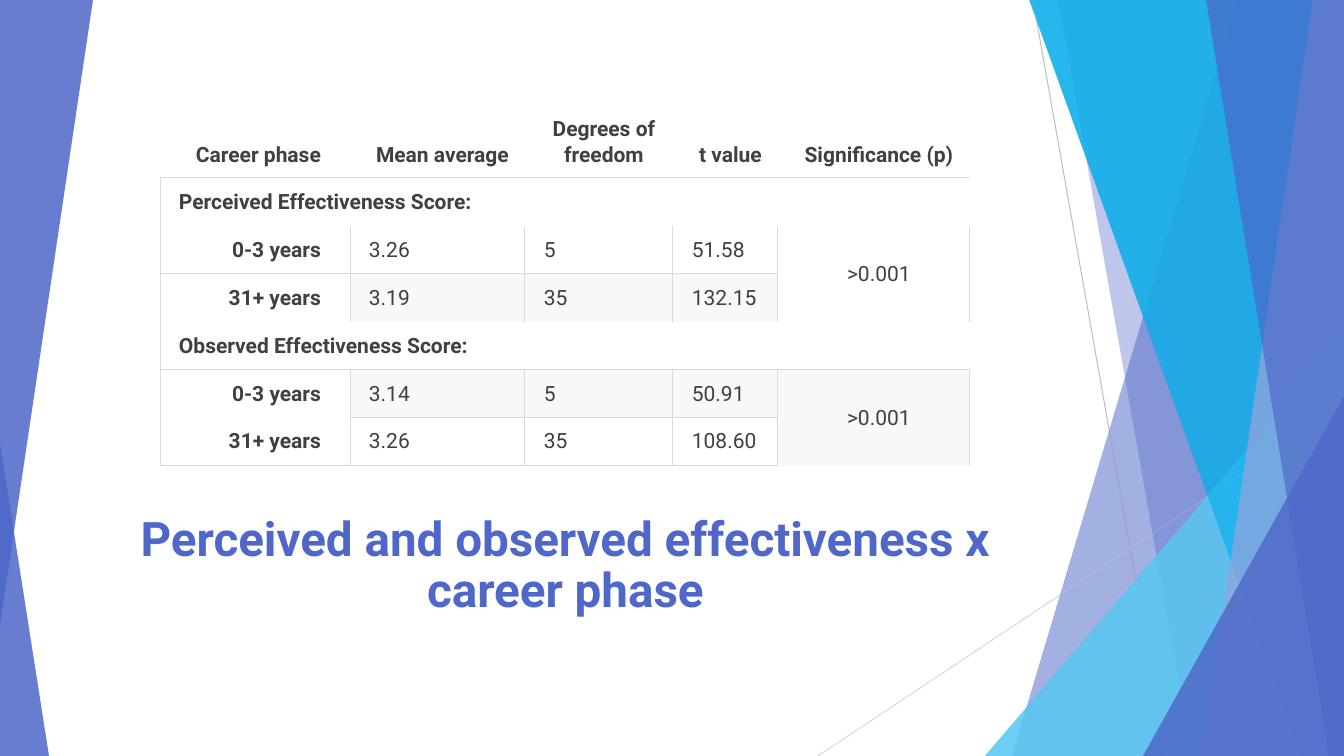
from lxml import etree
from pptx import Presentation
from pptx.dml.color import RGBColor
from pptx.enum.shapes import MSO_CONNECTOR, MSO_SHAPE
from pptx.enum.text import MSO_ANCHOR, MSO_AUTO_SIZE, PP_ALIGN
from pptx.oxml.ns import qn
from pptx.util import Pt

LEFT, MID, RIGHT = PP_ALIGN.LEFT, PP_ALIGN.CENTER, PP_ALIGN.RIGHT
TOP, MIDDLE, BOTTOM = MSO_ANCHOR.TOP, MSO_ANCHOR.MIDDLE, MSO_ANCHOR.BOTTOM
TRIANGLE, STRAIGHT = MSO_SHAPE.ISOSCELES_TRIANGLE, MSO_CONNECTOR.STRAIGHT

# Content
TITLE = "Perceived and observed effectiveness x career phase"
ROWS = [
    ("Career phase", "Mean average", "Degrees of freedom", "t value", "Significance (p)"),
    ("Perceived Effectiveness Score:",),
    ("0-3 years", "3.26", "5", "51.58", ">0.001"),
    ("31+ years", "3.19", "35", "132.15"),
    ("Observed Effectiveness Score:",),
    ("0-3 years", "3.14", "5", "50.91", ">0.001"),
    ("31+ years", "3.26", "35", "108.60"),
]
BLUE, GREY, TINT, INK = "4E67C8", "D8DCDC", "D8DEDC", "404040"

# Lengths in px
PX = 914400 / 100.8
WIDE, HIGH = 1344, 756
COLS = (190, 175, 148, 105, 192)
HEAD, BODY = 75, 48
GROUPS = (1, 4)
SHADED = (3, 5)
UNDER = {0: range(5), 2: range(4), 4: range(5), 5: range(1, 4), 6: range(5)}

# Bands: x at top, x at foot, colour, opacity; wedges: box, colour, opacity
FACETS = [
    (1238, 1012, BLUE, 30),
    (1058, 1192, BLUE, 20),
    ((985, 336, 359, 420), "5ECCF3", 72),
    (1029, 1301, "12B2EB", 70),
    (1313, 1202, "95A4DE", 70),
    (1206, 1329, BLUE, 65),
    ((1143, 396, 201, 360), BLUE, 80),
]
LINES = [((1033, 0, 1167, 756), "BFBFBF"), ((1344, 406, 818, 756), "D9D9D9")]


def emu(*vals):
    return [round(v * PX) for v in vals]


def rgb(code):
    return RGBColor.from_string(code)


def paint(fill, root, code, alpha):
    fill.solid()
    fill.fore_color.rgb = rgb(code)
    tone = root.find(qn("a:solidFill")).find(qn("a:srgbClr"))
    etree.SubElement(tone, qn("a:alpha"), val=str(alpha * 1000))


def finish(shape, code, alpha):
    shape.shadow.inherit = False
    shape.line.fill.background()
    paint(shape.fill, shape.element.spPr, code, alpha)


def write(frame, text, size=15, color=INK, bold=False, align=LEFT, space=1.07, after=8):
    par = frame.paragraphs[0]
    par.alignment, par.line_spacing, par.space_after = align, space, Pt(after)
    run = par.add_run()
    run.text = text
    font = run.font
    font.name, font.size, font.bold = "Roboto", Pt(size), bold
    font.color.rgb = rgb(color)


def wedge(box, code, alpha, tip=1, turn=0):
    shape = slide.shapes.add_shape(TRIANGLE, *emu(*box))
    shape.adjustments[0] = tip
    shape.rotation = turn
    finish(shape, code, alpha)


def band(top, foot, code, alpha):
    path = slide.shapes.build_freeform(top, -1, PX)
    path.add_line_segments([(WIDE, -1), (WIDE, HIGH), (foot, HIGH)], close=True)
    finish(path.convert_to_shape(), code, alpha)


def facets():
    for facet in FACETS:
        draw = wedge if len(facet) == 3 else band
        draw(*facet)


def border(cell, row, col):
    data = row > 0 and row not in GROUPS
    shown = {
        "L": data or (row > 0 and col == 0),
        "R": data or (row > 0 and col == 4),
        "T": col in UNDER.get(row - 1, ()),
        "B": col in UNDER.get(row, ()),
    }
    props = cell._tc.get_or_add_tcPr()
    for spot, (side, on) in enumerate(shown.items()):
        edge = etree.Element(qn("a:ln" + side), w=str(Pt(0.75)))
        if on:
            fill = etree.SubElement(edge, qn("a:solidFill"))
            etree.SubElement(fill, qn("a:srgbClr"), val=GREY)
        else:
            etree.SubElement(edge, qn("a:noFill"))
        props.insert(spot, edge)


deck = Presentation()
deck.slide_width, deck.slide_height = emu(WIDE, HIGH)
slide = deck.slides.add_slide(deck.slide_layouts[5])

# Backdrop: the facets lie in two layers with thin lines between
facets()
wedge((0, 443, 49, 313), BLUE, 85, tip=0)
for ends, code in LINES:
    line = slide.shapes.add_connector(STRAIGHT, *emu(*ends))
    line.line.color.rgb = rgb(code)
    line.line.width = Pt(0.75)
    etree.SubElement(line.element.spPr, qn("a:effectLst"))
facets()
wedge((0, 0, 93, 625), BLUE, 85, turn=180)

# Title
title = slide.shapes.title
title.left, title.top, title.width, title.height = emu(109, 502, 913, 121)
frame = title.text_frame
frame.auto_size = MSO_AUTO_SIZE.NONE
frame.word_wrap = True
frame.vertical_anchor = BOTTOM
write(frame, TITLE, size=34, color=BLUE, bold=True, align=MID, space=0.9, after=0)

# Table grid
tall = [HEAD] + [BODY] * (len(ROWS) - 1)
box = emu(160, 103, sum(COLS), sum(tall))
table = slide.shapes.add_table(len(ROWS), len(COLS), *box).table
table.first_row = table.horz_banding = False
for col, width in zip(table.columns, emu(*COLS)):
    col.width = width
for row, height in zip(table.rows, emu(*tall)):
    row.height = height

# Table cells
for r, texts in enumerate(ROWS):
    for c in range(len(COLS)):
        cell = table.cell(r, c)
        cell.margin_left, cell.margin_right = emu(19, 29 if c == 0 else 9)
        cell.margin_top, cell.margin_bottom = emu(10, 10)
        if r in SHADED and 0 < c < len(texts):
            paint(cell.fill, cell._tc.get_or_add_tcPr(), TINT, 20)
        else:
            cell.fill.background()
        border(cell, r, c)
        if c >= len(texts):
            continue
        cell.vertical_anchor = BOTTOM if r == 0 else MIDDLE if c == 4 else TOP
        align = LEFT
        if c == 0 and r not in GROUPS:
            align = RIGHT
        elif r == 0 or c == 4:
            align = MID
        write(cell.text_frame, texts[c], bold=r == 0 or c == 0, align=align)

# Spans
for r in GROUPS:
    table.cell(r, 0).merge(table.cell(r, 4))
    table.cell(r + 1, 4).merge(table.cell(r + 2, 4))

deck.save("out.pptx")
